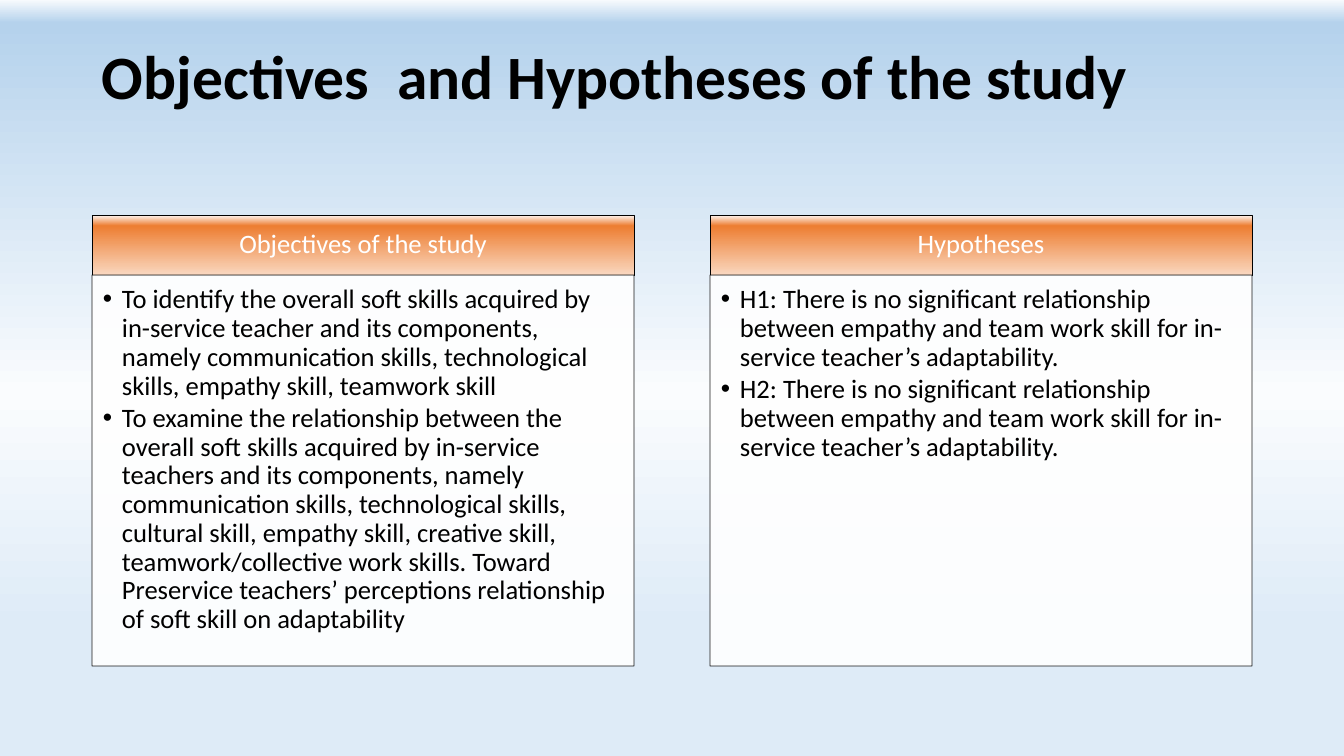
from pptx import Presentation
from pptx.dml.color import RGBColor
from pptx.enum.shapes import MSO_SHAPE as Shape
from pptx.enum.text import MSO_ANCHOR as Anchor, PP_ALIGN as Align
from pptx.oxml.ns import qn
from pptx.util import Emu, Pt
from lxml.etree import SubElement

EMU_PER_PX = 914400 / 100.8

BACKGROUND_STOPS = [(0, "F7FAFD"), (3, "B5D2EC"), (52, "FAFCFE"), (83, "DEEBF7")]
HEADER_STOPS = [(0, "FEF8F5"), (18, "ED7D31"), (83, "F7C5A2"), (100, "FAD8C1")]

COLUMNS = [
    ("Objectives of the study", [
        "To identify the overall soft skills acquired by in-service teacher and its "
        "components, namely communication skills, technological skills, empathy skill, "
        "teamwork skill",
        "To examine the relationship between the overall soft skills acquired by "
        "in-service teachers and its components, namely communication skills, "
        "technological skills, cultural skill, empathy skill, creative skill, "
        "teamwork/collective work skills. Toward Preservice teachers’ perceptions "
        "relationship of soft skill on adaptability",
    ]),
    ("Hypotheses", [
        f"{label}: There is no significant relationship between empathy and team work "
        "skill for in-service teacher’s adaptability."
        for label in ("H1", "H2")
    ]),
]


def px(value):
    return Emu(round(value * EMU_PER_PX))


def color(value):
    return RGBColor.from_string(value)


def set_gradient(fill, element, stops):
    """Fill from top to bottom with (percent, colour) stops."""
    fill.gradient()
    fill.gradient_angle = 270
    stop_list = next(element.iter(qn("a:gsLst")))
    for stop in list(stop_list):
        stop_list.remove(stop)
    for percent, value in stops:
        stop = SubElement(stop_list, qn("a:gs"), pos=str(percent * 1000))
        SubElement(stop, qn("a:srgbClr"), val=value)


def set_opacity(shape, percent):
    """Apply one opacity to the solid fill and the outline."""
    for solid in shape._element.spPr.iter(qn("a:solidFill")):
        SubElement(solid[0], qn("a:alpha"), val=str(percent * 1000))


def write_text(shape, paragraphs, size=19, ink="000000", bold=False, align=Align.LEFT,
               anchor=Anchor.TOP, insets=(10, 5, 10, 5), after=0, bullet_indent=0):
    frame = shape.text_frame
    frame.word_wrap = True
    frame.vertical_anchor = anchor
    (frame.margin_left, frame.margin_top,
     frame.margin_right, frame.margin_bottom) = map(px, insets)
    for index, text in enumerate(paragraphs):
        paragraph = frame.add_paragraph() if index else frame.paragraphs[0]
        paragraph.alignment = align
        paragraph.line_spacing = 0.9
        paragraph.space_after = Pt(after)
        run = paragraph.add_run()
        run.text = text
        run.font.name = "Calibri"
        run.font.size = Pt(size)
        run.font.bold = bold
        run.font.color.rgb = color(ink)
        if bullet_indent:
            properties = paragraph._p.get_or_add_pPr()
            properties.set("marL", str(px(bullet_indent)))
            properties.set("indent", str(-px(bullet_indent)))
            SubElement(properties, qn("a:buFont"), typeface="Arial")
            SubElement(properties, qn("a:buChar"), char="•")


class StudySlide:
    def __init__(self, presentation):
        self.slide = presentation.slides.add_slide(presentation.slide_layouts[6])
        set_gradient(self.slide.background.fill, self.slide._element, BACKGROUND_STOPS)

    def title(self, text, box):
        shape = self.slide.shapes.add_textbox(*map(px, box))
        write_text(shape, [text], size=44, bold=True, anchor=Anchor.MIDDLE)

    def rectangle(self, box):
        shape = self.slide.shapes.add_shape(Shape.RECTANGLE, *map(px, box))
        shape.shadow.inherit = False
        shape.line.color.rgb = color("000000")
        shape.line.width = Pt(0.5)
        return shape

    def header(self, text, box):
        shape = self.rectangle(box)
        set_gradient(shape.fill, shape._element, HEADER_STOPS)
        write_text(shape, [text], ink="FFFFFF", align=Align.CENTER,
                   anchor=Anchor.MIDDLE, insets=(15, 8, 15, 8))

    def bullet_panel(self, items, box):
        shape = self.rectangle(box)
        shape.fill.solid()
        shape.fill.fore_color.rgb = color("FFFFFF")
        set_opacity(shape, 90)
        write_text(shape, items, insets=(11, 11, 15, 17), after=2.5, bullet_indent=19)


def main():
    presentation = Presentation()
    presentation.slide_width, presentation.slide_height = px(1344), px(756)
    study = StudySlide(presentation)

    # Title
    study.title("Objectives  and Hypotheses of the study", (92, 40, 1159, 79))

    # Two columns, each a header over a bullet panel
    left, top, width, pitch = 92, 215, 542, 618
    header_height, panel_height = 60, 391
    for index, (heading, items) in enumerate(COLUMNS):
        x = left + index * pitch
        study.header(heading, (x, top, width, header_height))
        study.bullet_panel(items, (x, top + header_height, width, panel_height))

    presentation.save("out.pptx")


if __name__ == "__main__":
    main()
